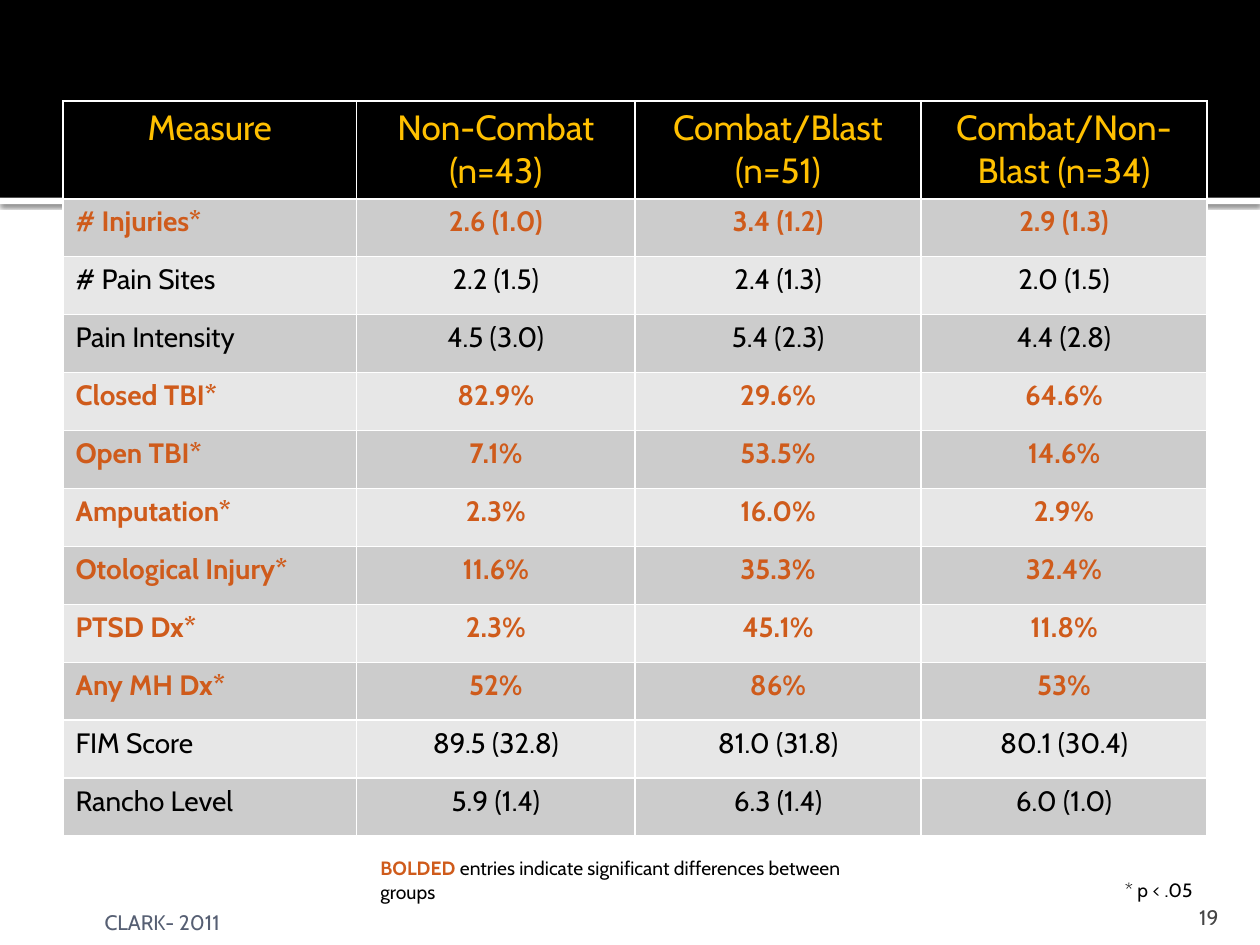
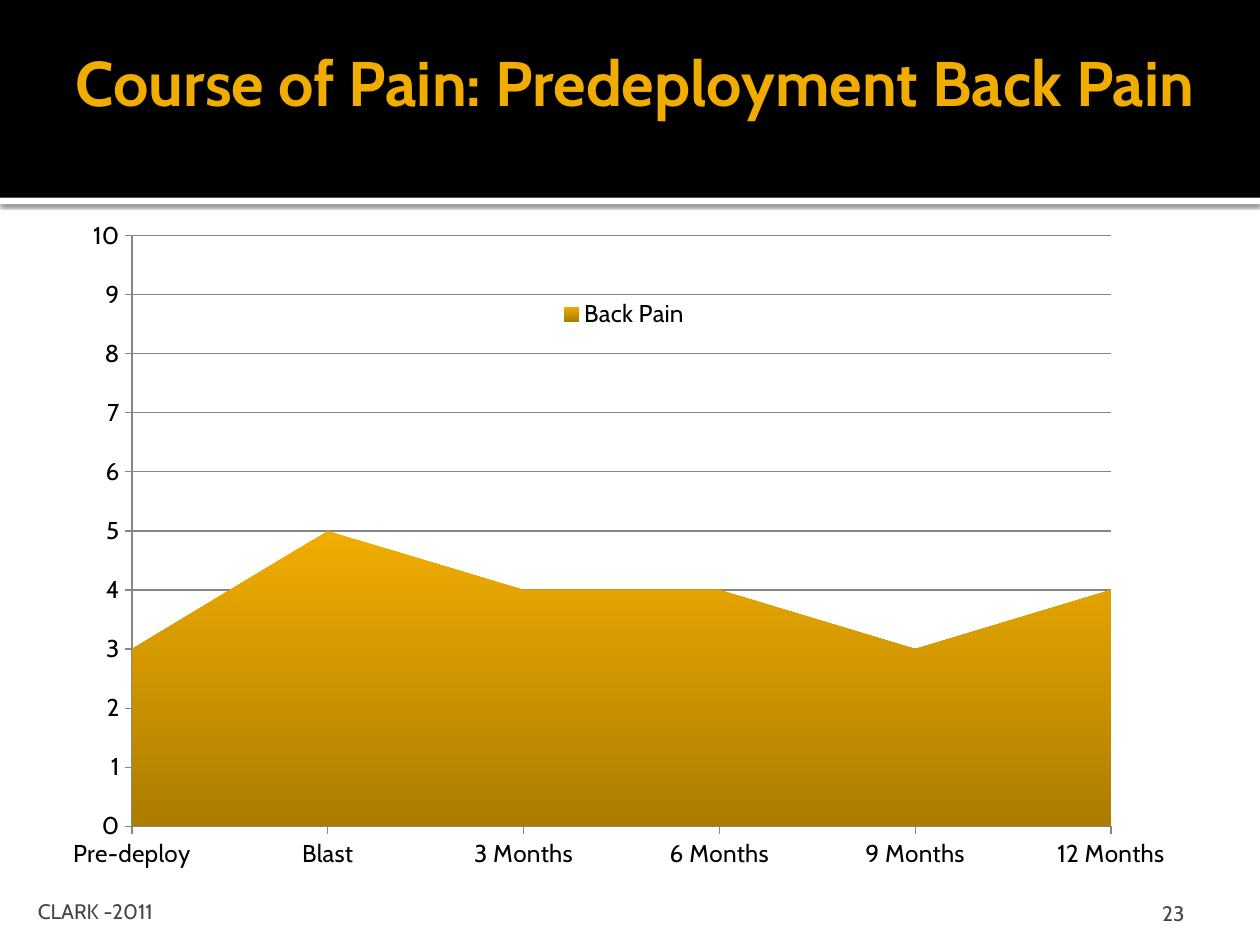
"""Build two slides on pain measures: a comparison table and an area chart."""
from dataclasses import dataclass

from lxml.etree import SubElement
from pptx import Presentation
from pptx.chart.data import CategoryChartData
from pptx.dml.color import RGBColor
from pptx.enum.chart import XL_CHART_TYPE, XL_LEGEND_POSITION, XL_TICK_MARK
from pptx.enum.shapes import MSO_SHAPE
from pptx.enum.text import MSO_ANCHOR, MSO_AUTO_SIZE, PP_ALIGN
from pptx.oxml import parse_xml
from pptx.oxml.ns import nsdecls, qn
from pptx.util import Inches, Pt


@dataclass(frozen=True)
class Theme:
    font: str = "Cabin"
    black: str = "000000"
    white: str = "FFFFFF"
    gold: str = "F0AD00"
    dark_gold: str = "AD7C00"
    header: str = "FFC000"
    accent: str = "CF5B1B"
    gray: str = "454545"
    slate: str = "565F73"
    grid: str = "868686"
    stripes: tuple = ("CCCCCC", "E7E7E7")
    title_size: int = 36
    header_size: int = 20
    cell_size: int = 16
    axis_size: int = 14
    footer_size: int = 12
    note_size: int = 11


MEASURES = [
    ("Measure", "Non-Combat (n=43)", "Combat/Blast (n=51)", "Combat/Non-Blast (n=34)"),
    ("# Injuries*", "2.6 (1.0)", "3.4 (1.2)", "2.9 (1.3)"),
    ("# Pain Sites", "2.2 (1.5)", "2.4 (1.3)", "2.0 (1.5)"),
    ("Pain Intensity", "4.5 (3.0)", "5.4 (2.3)", "4.4 (2.8)"),
    ("Closed TBI*", "82.9%", "29.6%", "64.6%"),
    ("Open TBI*", "7.1%", "53.5%", "14.6%"),
    ("Amputation*", "2.3%", "16.0%", "2.9%"),
    ("Otological Injury*", "11.6%", "35.3%", "32.4%"),
    ("PTSD Dx*", "2.3%", "45.1%", "11.8%"),
    ("Any MH Dx*", "52%", "86%", "53%"),
    ("FIM Score", "89.5 (32.8)", "81.0 (31.8)", "80.1 (30.4)"),
    ("Rancho Level", "5.9 (1.4)", "6.3 (1.4)", "6.0 (1.0)"),
]
BACK_PAIN = {"Pre-deploy": 3, "Blast": 5, "3 Months": 4,
             "6 Months": 4, "9 Months": 3, "12 Months": 4}
TITLE_ONLY, BLANK = 5, 6


def rgb(color):
    return RGBColor.from_string(color)


def assign(target, **values):
    for name, value in values.items():
        setattr(target, name, value)


def place(shape, box):
    assign(shape, **dict(zip(("left", "top", "width", "height"), map(Inches, box))))


def set_layout(parent, index, x, y, w=None, h=None, target=""):
    for old in parent.findall(qn("c:layout")):
        parent.remove(old)
    layout = parse_xml(f"<c:layout {nsdecls('c')}><c:manualLayout/></c:layout>")
    values = {"layoutTarget": target, "xMode": "edge", "yMode": "edge",
              "x": x, "y": y, "w": w, "h": h}
    for tag, value in values.items():
        if value not in (None, ""):
            SubElement(layout[0], qn(f"c:{tag}")).set("val", str(value))
    parent.insert(index, layout)


class Deck:
    def __init__(self, theme):
        self.theme = theme
        self.prs = Presentation()
        assign(self.prs, slide_width=Inches(10), slide_height=Inches(7.5))

    def new_slide(self, layout):
        self.slide = self.prs.slides.add_slide(self.prs.slide_layouts[layout])
        strip = self.band(1.57, 0.05, self.theme.white)
        shadow = SubElement(strip._element.spPr.find(qn("a:effectLst")), qn("a:outerShdw"))
        for name, value in {"blurRad": Pt(2.5), "dist": Pt(0.8), "dir": 5400000}.items():
            shadow.set(name, str(int(value)))
        shade = SubElement(shadow, qn("a:srgbClr"), val=self.theme.black)
        SubElement(shade, qn("a:alpha"), val="60000")
        self.band(0, 1.57, self.theme.black)

    def band(self, top, height, color):
        band = self.slide.shapes.add_shape(
            MSO_SHAPE.RECTANGLE, 0, Inches(top), Inches(10), Inches(height))
        band.shadow.inherit = False
        band.fill.solid()
        band.fill.fore_color.rgb = rgb(color)
        band.line.fill.background()
        return band

    def style(self, font, size, color, bold=False):
        assign(font, name=self.theme.font, size=Pt(size), bold=bold)
        font.color.rgb = rgb(color)

    def add_runs(self, frame, runs, size, align=PP_ALIGN.LEFT):
        paragraph = frame.paragraphs[0]
        paragraph.alignment = align
        for text, color, bold in runs:
            run = paragraph.add_run()
            run.text = text
            self.style(run.font, size, color, bold)

    def frame(self, frame, margins, anchor, wrap=True):
        names = ("margin_left", "margin_top", "margin_right", "margin_bottom")
        assign(frame, word_wrap=wrap, auto_size=MSO_AUTO_SIZE.NONE,
               vertical_anchor=anchor, **dict(zip(names, map(Inches, margins))))

    def title(self, text, box):
        title = self.slide.shapes.title
        place(title, box)
        self.slide.shapes._spTree.append(title._element)
        self.frame(title.text_frame, (0.1, 0.05, 0.05, 0.05), MSO_ANCHOR.MIDDLE)
        self.add_runs(title.text_frame, [(text, self.theme.gold, True)], self.theme.title_size)

    def text(self, runs, box, size, margins=(0.1, 0.05, 0.1, 0.05),
             anchor=MSO_ANCHOR.TOP, align=PP_ALIGN.LEFT, wrap=True):
        label = self.slide.shapes.add_textbox(*map(Inches, box))
        self.frame(label.text_frame, margins, anchor, wrap)
        self.add_runs(label.text_frame, runs, size, align)

    def footer(self, text, box, color, margins, align=PP_ALIGN.LEFT):
        self.text([(text, color, False)], box, self.theme.footer_size,
                  margins, MSO_ANCHOR.BOTTOM, align)

    def page_number(self, number, box):
        self.footer(number, box, self.theme.gray, (0.1, 0.05, 0.1, 0), PP_ALIGN.RIGHT)

    def cell(self, cell, text, size, color, bold, fill, align):
        self.add_runs(cell.text_frame, [(text, color, bold)], size, align)
        cell.fill.solid()
        cell.fill.fore_color.rgb = rgb(fill)
        for index, side in enumerate("LRTB"):
            cell._tc.get_or_add_tcPr().insert(index, parse_xml(
                f'<a:ln{side} {nsdecls("a")} w="{int(Pt(1))}"><a:solidFill>'
                f'<a:srgbClr val="{self.theme.white}"/></a:solidFill></a:ln{side}>'))

    def table(self, rows, box, widths, heights):
        theme = self.theme
        table = self.slide.shapes.add_table(
            len(rows), len(widths), *map(Inches, box)).table
        for column, width in zip(table.columns, widths):
            column.width = Inches(width)
        for r, (values, height) in enumerate(zip(rows, heights)):
            table.rows[r].height = Inches(height)
            significant = values[0].endswith("*")
            if r == 0:
                look = (theme.header_size, theme.header, False, theme.black)
            else:
                look = (theme.cell_size, theme.accent if significant else theme.black,
                        significant, theme.stripes[(r - 1) % 2])
            for c, value in enumerate(values):
                align = PP_ALIGN.LEFT if r and c == 0 else PP_ALIGN.CENTER
                self.cell(table.cell(r, c), value, *look, align)

    def area_chart(self, name, points, box):
        theme = self.theme
        chart_data = CategoryChartData()
        chart_data.categories = list(points)
        chart_data.add_series(name, list(points.values()))
        chart = self.slide.shapes.add_chart(
            XL_CHART_TYPE.AREA, *map(Inches, box), chart_data).chart
        assign(chart, has_title=False, has_legend=True)
        self.style(chart.font, theme.axis_size, theme.black)

        assign(chart.value_axis, minimum_scale=0, maximum_scale=10,
               major_unit=1, has_major_gridlines=True)
        chart.value_axis._element.find(qn("c:crossBetween")).set("val", "midCat")
        chart.value_axis.major_gridlines.format.line.color.rgb = rgb(theme.grid)
        for axis in (chart.category_axis, chart.value_axis):
            assign(axis, major_tick_mark=XL_TICK_MARK.OUTSIDE,
                   minor_tick_mark=XL_TICK_MARK.NONE)
            axis.format.line.color.rgb = rgb(theme.grid)
            self.style(axis.tick_labels.font, theme.axis_size, theme.black)

        fill = chart.plots[0].series[0].format.fill
        fill.gradient()
        fill.gradient_angle = 270
        for stop, color in zip(fill.gradient_stops, (theme.gold, theme.dark_gold)):
            stop.color.rgb = rgb(color)

        assign(chart.legend, position=XL_LEGEND_POSITION.TOP, include_in_layout=False)
        self.style(chart.legend.font, theme.axis_size, theme.black)
        set_layout(chart.legend._element, 1, 0.44, 0.11)
        set_layout(chart._chartSpace.chart.plotArea, 0, 0.05, 0.02, 0.9, 0.91, "inner")


def build_measures(deck):
    theme = deck.theme
    deck.new_slide(BLANK)
    deck.page_number("19", (8.97, 7.08, 0.8, 0.3))
    deck.table(MEASURES, (0.5, 0.8, 9.08, 5.8), (2.33, 2.21, 2.27, 2.27),
               [0.77] + [0.46] * (len(MEASURES) - 1))
    deck.footer("CLARK- 2011", (0.83, 7.25, 1.5, 0.17), theme.slate, (0, 0, 0, 0))
    deck.text([("* p < .05", theme.black, False)], (8.83, 6.92, 0.77, 0.29),
              theme.note_size, wrap=False)
    deck.text([("BOLDED ", theme.accent, True),
               ("entries indicate significant differences between groups",
                theme.black, False)], (2.92, 6.75, 4.28, 0.29), theme.note_size)


def build_course(deck):
    deck.new_slide(TITLE_ONLY)
    deck.title("Course of Pain: Predeployment Back Pain", (0.5, 0.13, 9.25, 1.03))
    deck.footer("CLARK -2011", (0.25, 6.81, 3.17, 0.52), deck.theme.gray,
                (0.05, 0.05, 0.05, 0))
    deck.page_number("23", (7.17, 6.83, 2.33, 0.52))
    deck.area_chart("Back Pain", BACK_PAIN, (0.58, 1.75, 8.67, 5.17))


def main():
    deck = Deck(Theme())
    build_measures(deck)
    build_course(deck)
    deck.prs.save("out.pptx")


if __name__ == "__main__":
    main()
